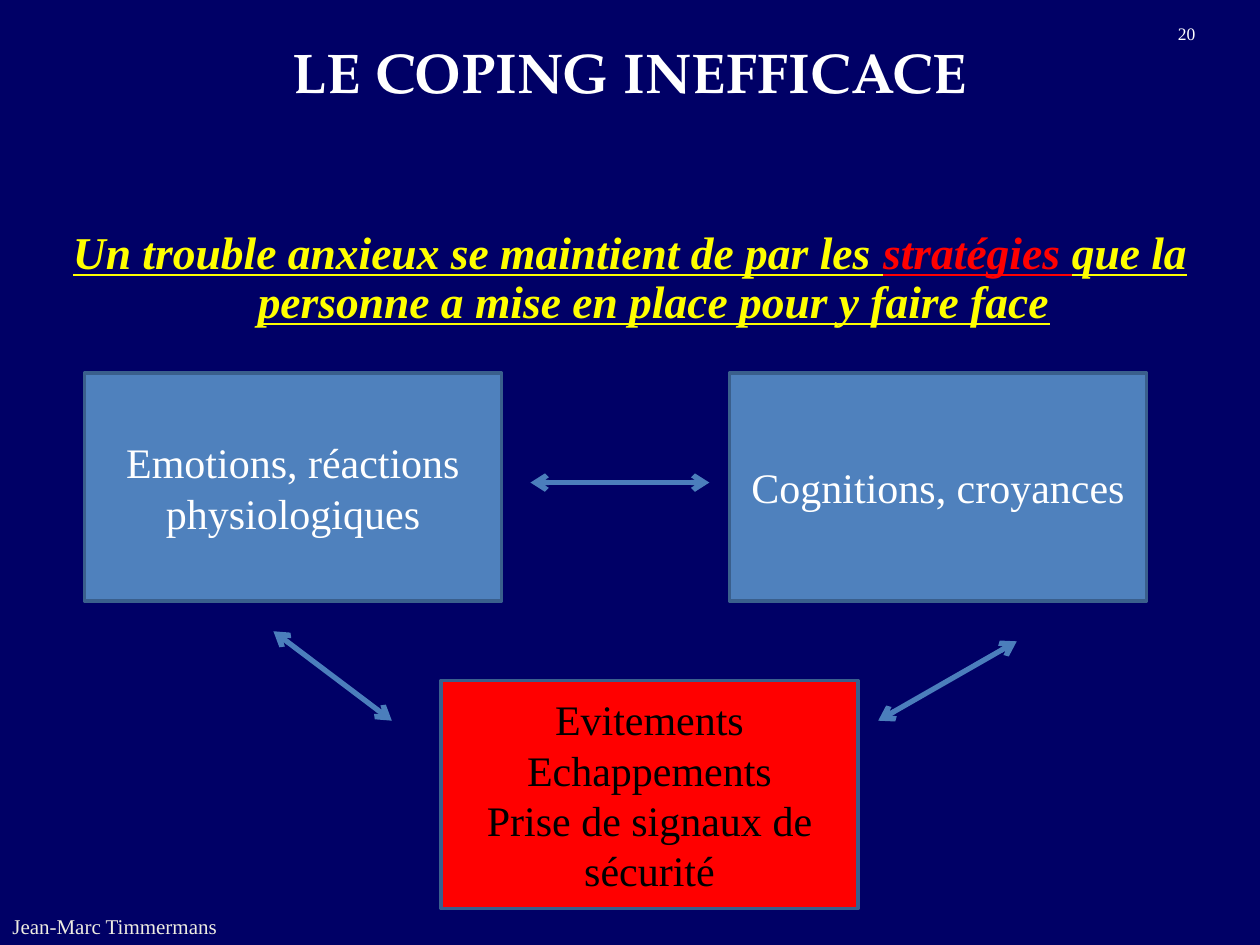
from lxml.etree import SubElement
from pptx import Presentation
from pptx.dml.color import RGBColor
from pptx.enum.shapes import MSO_CONNECTOR, MSO_SHAPE
from pptx.enum.text import MSO_ANCHOR, MSO_AUTO_SIZE, PP_ALIGN
from pptx.oxml.ns import qn
from pptx.util import Inches, Pt

SERIF = "Times New Roman"
BLUE, RED, YELLOW, WHITE = "4F81BD", "FF0000", "FFFF00", "FFFFFF"
BOX_W, BOX_H = 3.31, 1.81


def color(hex_code):
    return RGBColor.from_string(hex_code)


def add_text(p, text, size, fill=WHITE, font=SERIF, bold=False, italic=False,
             underline=False, align=None):
    r = p.add_run()
    r.text = text
    f = r.font
    f.name, f.size, f.color.rgb = font, Pt(size), color(fill)
    f.bold, f.italic, f.underline = bold, italic, underline
    if align is not None:
        p.alignment = align


def place(sp, x, y, w, h):
    sp.left, sp.top, sp.width, sp.height = map(Inches, (x, y, w, h))


def fill_title(sp, x, y, w, h):
    place(sp, x, y, w, h)
    tf = sp.text_frame
    tf.auto_size, tf.vertical_anchor = MSO_AUTO_SIZE.NONE, MSO_ANCHOR.TOP
    add_text(tf.paragraphs[0], "LE COPING INEFFICACE", 32,
             font="TeX Gyre Pagella", bold=True, align=PP_ALIGN.CENTER)


def fill_statement(sp, x, y, w, h):
    place(sp, x, y, w, h)
    tf = sp.text_frame
    tf.auto_size, tf.vertical_anchor = MSO_AUTO_SIZE.NONE, MSO_ANCHOR.TOP
    tf.margin_top = Inches(0.25)
    p = tf.paragraphs[0]
    p.line_spacing, p.space_before = 0.9, Pt(0)
    pPr = p._p.get_or_add_pPr()
    pPr.set("marL", str(Inches(0.38)))
    pPr.set("indent", str(Inches(-0.38)))
    SubElement(pPr, qn("a:buNone"))
    for text, fill in (
        ("Un trouble anxieux se maintient de par les ", YELLOW),
        ("stratégies ", RED),
        ("que la personne a mise en place pour y faire face", YELLOW),
    ):
        add_text(p, text, 26, fill, bold=True, italic=True, underline=True,
                 align=PP_ALIGN.CENTER)


def add_label(s, text, x, y, w, h, size, fill=WHITE, wrap=True):
    tf = s.shapes.add_textbox(*map(Inches, (x, y, w, h))).text_frame
    tf.word_wrap = wrap
    add_text(tf.paragraphs[0], text, size, fill)


def add_box(s, lines, x, y, fill=BLUE, text_fill=WHITE):
    sp = s.shapes.add_shape(MSO_SHAPE.RECTANGLE,
                            *map(Inches, (x, y, BOX_W, BOX_H)))
    sp.shadow.inherit = False
    sp.fill.solid()
    sp.fill.fore_color.rgb = color(fill)
    sp.line.color.rgb, sp.line.width = color("3A5F8C"), Pt(2)
    tf = sp.text_frame
    tf.word_wrap, tf.vertical_anchor = True, MSO_ANCHOR.MIDDLE
    for i, line in enumerate(lines):
        p = tf.add_paragraph() if i else tf.paragraphs[0]
        add_text(p, line, 24, text_fill, align=PP_ALIGN.CENTER)


def add_double_arrow(s, x1, y1, x2, y2):
    c = s.shapes.add_connector(MSO_CONNECTOR.STRAIGHT,
                               *map(Inches, (x1, y1, x2, y2)))
    c.line.color.rgb, c.line.width = color("4B7EBC"), Pt(3)
    ln = c.line._get_or_add_ln()
    for end in ("a:headEnd", "a:tailEnd"):
        SubElement(ln, qn(end), type="arrow")
    SubElement(c._element.spPr, qn("a:effectLst"))


def add_cycle(s, x, y):
    """Three boxes linked by double arrows, from the top left corner x, y."""
    add_box(s, ["Cognitions, croyances"], x + 5.12, y)
    add_box(s, ["Evitements", "Echappements", "Prise de signaux de sécurité"],
            x + 2.83, y + 2.44, RED, "000000")
    add_box(s, ["Emotions, réactions physiologiques"], x, y)
    for x1, y1, x2, y2 in ((3.54, 0.87, 4.96, 0.87),
                           (6.3, 2.76, 7.4, 2.13),
                           (1.5, 2.05, 2.44, 2.76)):
        add_double_arrow(s, x + x1, y + y1, x + x2, y + y2)


def main():
    prs = Presentation()
    prs.slide_width, prs.slide_height = Inches(10), Inches(7.5)
    s = prs.slides.add_slide(prs.slide_layouts[1])
    s.background.fill.solid()
    s.background.fill.fore_color.rgb = color("000066")
    fill_title(s.shapes.title, 0, 0.25, 10, 1.25)
    fill_statement(s.placeholders[1], 0, 1.58, 10, 5.92)
    add_label(s, "Jean-Marc Timmermans", 0, 7.2, 1.85, 0.3, 12, "EEECE1",
              wrap=False)
    add_label(s, "20", 9.25, 0.13, 0.63, 0.44, 10)
    add_cycle(s, 0.67, 2.96)
    prs.save("out.pptx")


if __name__ == "__main__":
    main()
